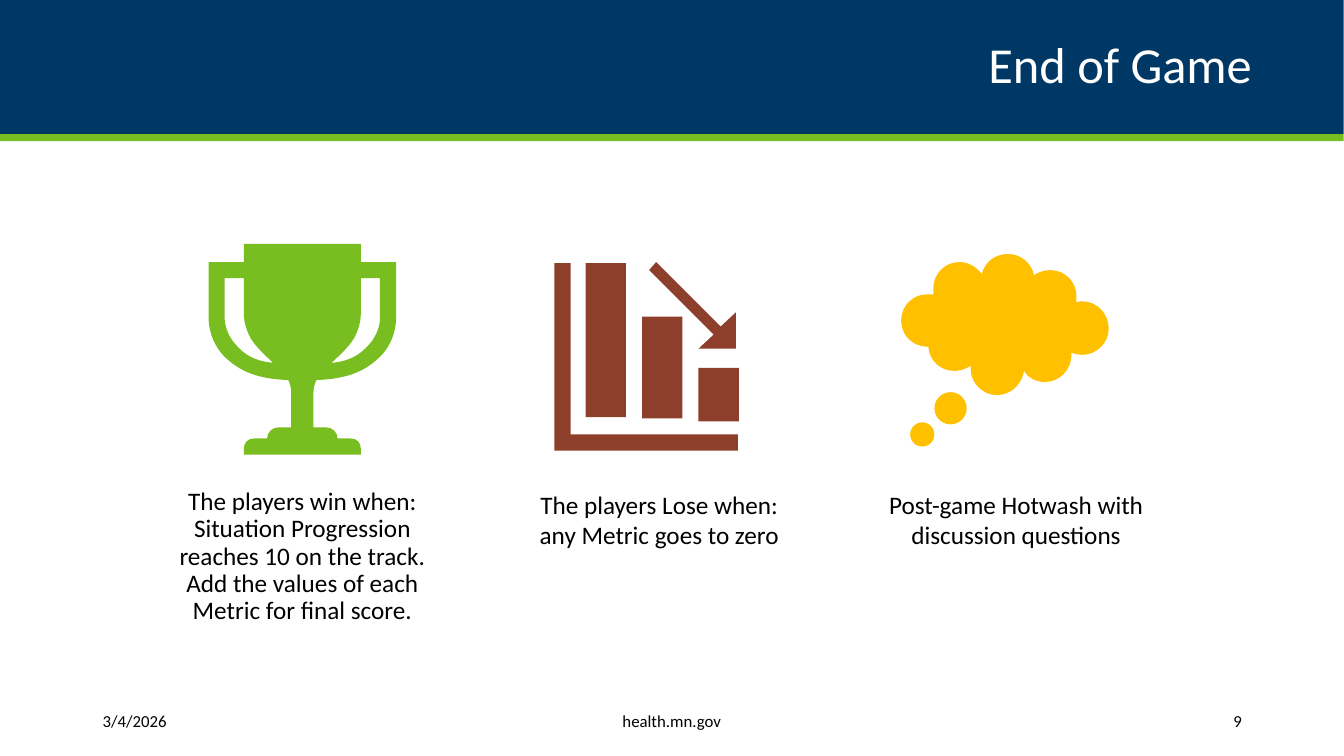
from dataclasses import dataclass
from typing import Any

from lxml.etree import SubElement
from pptx import Presentation
from pptx.dml.color import RGBColor
from pptx.enum.shapes import MSO_SHAPE as Preset
from pptx.enum.text import MSO_ANCHOR as Anchor, MSO_AUTO_SIZE as AutoSize, PP_ALIGN as Align
from pptx.oxml.ns import qn
from pptx.util import Emu, Inches, Pt

PX = 9144
NAVY, GREEN, BROWN, GOLD = "003865", "78BE21", "8D3F2B", "FFC000"
WHITE, BLACK = "FFFFFF", "000000"
Box = tuple[int, int, int, int]
Outline = list[tuple[int, ...]]


@dataclass(frozen=True)
class Block:
    """A filled preset shape."""
    box: Box
    color: str
    preset: Any = Preset.RECTANGLE


@dataclass(frozen=True)
class Caption:
    """A body text under one icon."""
    idx: int
    left: int
    wording: str
    line_spacing: float = 1.0


@dataclass(frozen=True)
class FooterItem:
    """One piece of the bottom line."""
    left: int
    width: int
    wording: str
    align: Any


BLOCKS = [
    Block((0, 0, 1333, 133), NAVY),
    Block((0, 133, 1333, 7), GREEN),
    Block((581, 261, 40, 153), BROWN),
    Block((637, 314, 40, 101), BROWN),
    Block((693, 365, 40, 53), BROWN),
    Block((927, 389, 32, 32), GOLD, Preset.OVAL),
    Block((903, 419, 24, 24), GOLD, Preset.OVAL),
]
CAPTIONS = [
    Caption(1, 161, "The players win when: Situation Progression reaches 10 on the track. "
                    "Add the values of each Metric for final score.", 0.9),
    Caption(2, 515, "The players Lose when: any Metric goes to zero"),
    Caption(3, 869, "Post-game Hotwash with discussion questions"),
]
FOOTER = [
    FooterItem(92, 149, "3/4/2026", Align.LEFT),
    FooterItem(361, 611, "health.mn.gov", Align.CENTER),
    FooterItem(1082, 160, "9", Align.RIGHT),
]
TROPHY_AXIS = 300
TROPHY_RIGHT: Outline = [
    (300, 242), (358, 242), (358, 260), (393, 260), (393, 316),
    (393, 318, 393, 337, 378, 353), (363, 368, 345, 376, 314, 377),
    (312, 381, 311, 385, 311, 390), (311, 424), (324, 424),
    (330, 424, 335, 429, 335, 435), (348, 435),
    (354, 435, 358, 439, 358, 445), (358, 451),
]
HANDLE_RIGHT: Outline = [
    (366, 342), (357, 352, 348, 358, 329, 360), (334, 355, 340, 350, 345, 344),
    (347, 342, 351, 336, 351, 336), (355, 329, 358, 320, 358, 311),
    (358, 276), (377, 276), (377, 317), (377, 317, 377, 330, 366, 342),
]
AXES: Outline = [(566, 261), (550, 261), (550, 447), (732, 447), (732, 431), (566, 431)]
FALLING_ARROW: Outline = [(715, 324), (651, 260), (644, 268), (708, 332),
                          (693, 346), (730, 346), (730, 310)]
CLOUD: Outline = [
    (1074, 299), (1072, 299, 1070, 299, 1068, 300), (1068, 298, 1068, 296, 1068, 294),
    (1068, 280, 1057, 268, 1042, 268), (1036, 268, 1030, 270, 1026, 273),
    (1023, 261, 1013, 252, 1000, 252), (987, 252, 977, 260, 974, 272),
    (969, 265, 961, 260, 952, 260), (937, 260, 926, 272, 926, 286),
    (926, 288, 926, 290, 926, 292), (924, 292, 922, 292, 920, 292),
    (906, 292, 894, 303, 894, 318), (894, 333, 906, 344, 920, 344),
    (920, 344, 920, 344, 921, 344),
    (922, 358, 933, 368, 947, 368), (953, 368, 958, 366, 963, 363),
    (963, 363, 963, 365, 963, 366), (963, 380, 975, 392, 989, 392),
    (1003, 392, 1014, 381, 1016, 368), (1020, 375, 1028, 379, 1037, 379),
    (1051, 379, 1063, 367, 1063, 352), (1063, 352, 1063, 351, 1063, 350),
    (1066, 351, 1070, 352, 1074, 352), (1088, 352, 1100, 340, 1100, 326),
    (1100, 311, 1088, 299, 1074, 299),
]


def rgb(color: str) -> RGBColor:
    """Turn a hex string into a colour."""
    return RGBColor.from_string(color)


def assign(target: Any, values: dict[str, Any]) -> None:
    """Set every named attribute on the target."""
    for name, value in values.items():
        setattr(target, name, value)


def place(shape: Any, box: Box) -> None:
    """Move and size a shape in px."""
    assign(shape, dict(zip(("left", "top", "width", "height"), (Emu(n * PX) for n in box))))


def paint(shape: Any, color: str) -> None:
    """Give a shape a plain fill without line or shadow."""
    shape.shadow.inherit = False
    shape.fill.solid()
    shape.fill.fore_color.rgb = rgb(color)
    shape.line.fill.background()


def mirror(outline: Outline) -> Outline:
    """Reflect an outline across the trophy axis, running backwards."""
    def flip(x: int, y: int) -> tuple[int, int]:
        return 2 * TROPHY_AXIS - x, y

    mirrored: Outline = [flip(*outline[-1][-2:])]
    for before, step in reversed(list(zip(outline, outline[1:]))):
        end = flip(*before[-2:])
        mirrored.append(end if len(step) == 2 else
                        flip(*step[2:4]) + flip(*step[:2]) + end)
    return mirrored


def draw_outline(shapes: Any, contours: list[Outline], color: str) -> None:
    """Draw closed contours of lines and cubic curves as one filled shape."""
    ends = [[step[-2:] for step in contour] for contour in contours]
    pen = shapes.build_freeform(*ends[0][0], scale=PX)
    for number, corners in enumerate(ends):
        if number:
            pen.move_to(*corners[0])
        pen.add_line_segments(corners[1:], close=True)
    shape = pen.convert_to_shape()
    paint(shape, color)

    left, top = (min(values) for values in zip(*sum(ends, [])))
    steps = [step for contour in contours for step in contour[1:]]
    for step, segment in zip(steps, list(shape._element.iter(qn("a:lnTo")))):
        if len(step) == 6:
            segment.tag = qn("a:cubicBezTo")
            for number, (x, y) in enumerate((step[:2], step[2:4])):
                knot = SubElement(segment, qn("a:pt"), x=str(x - left), y=str(y - top))
                segment.insert(number, knot)


def write(shape: Any, wording: str, size: int, color: str, frame_format: dict[str, Any],
          paragraph_format: dict[str, Any]) -> None:
    """Fill a shape with one formatted paragraph without a bullet."""
    frame = shape.text_frame
    assign(frame, {"word_wrap": True, "auto_size": AutoSize.NONE, **frame_format})
    frame.text = wording
    paragraph = frame.paragraphs[0]
    assign(paragraph, {"space_before": Pt(0), **paragraph_format})
    properties = paragraph._p.get_or_add_pPr()
    properties.set("marL", "0")
    properties.set("indent", "0")
    SubElement(properties, qn("a:buNone"))
    run_font = paragraph.runs[0].font
    assign(run_font, {"name": "Calibri", "size": Pt(size), "bold": False})
    run_font.color.rgb = rgb(color)


def main() -> None:
    """Build the slide and save it."""
    deck = Presentation()
    assign(deck, {"slide_width": Inches(40 / 3), "slide_height": Inches(7.5)})
    slide = deck.slides.add_slide(deck.slide_layouts.get_by_name("Comparison"))
    shapes = slide.shapes

    for block in BLOCKS:
        paint(shapes.add_shape(block.preset, *(Emu(n * PX) for n in block.box)), block.color)
    draw_outline(shapes, [TROPHY_RIGHT + mirror(TROPHY_RIGHT),
                          HANDLE_RIGHT, mirror(HANDLE_RIGHT)], GREEN)
    for outline, color in ((AXES, BROWN), (FALLING_ARROW, BROWN), (CLOUD, GOLD)):
        draw_outline(shapes, [outline], color)

    heading = shapes.title
    place(heading, (92, 0, 1150, 133))
    write(heading, "End of Game", 36, WHITE,
          {"vertical_anchor": Anchor.MIDDLE, "margin_left": 0, "margin_right": 0,
           "margin_top": Emu(20 * PX), "margin_bottom": Emu(20 * PX)},
          {"alignment": Align.RIGHT, "line_spacing": 0.9})
    shapes._spTree.append(heading._element)

    bodies = {holder.placeholder_format.idx: holder for holder in slide.placeholders}
    margins = {f"margin_{side}": Emu(10 * PX) for side in ("left", "top", "right", "bottom")}
    for caption in CAPTIONS:
        place(bodies[caption.idx], (caption.left, 475, 278, 178))
        write(bodies[caption.idx], caption.wording, 18, BLACK,
              {"vertical_anchor": Anchor.TOP, **margins},
              {"alignment": Align.CENTER, "line_spacing": caption.line_spacing,
               "space_after": Pt(10)})
    shapes._spTree.remove(bodies[4]._element)

    for item in FOOTER:
        box = (Emu(n * PX) for n in (item.left, 695, item.width, 40))
        write(shapes.add_textbox(*box), item.wording, 12, BLACK,
              {"vertical_anchor": Anchor.MIDDLE}, {"alignment": item.align})
    deck.save("out.pptx")


if __name__ == "__main__":
    main()
